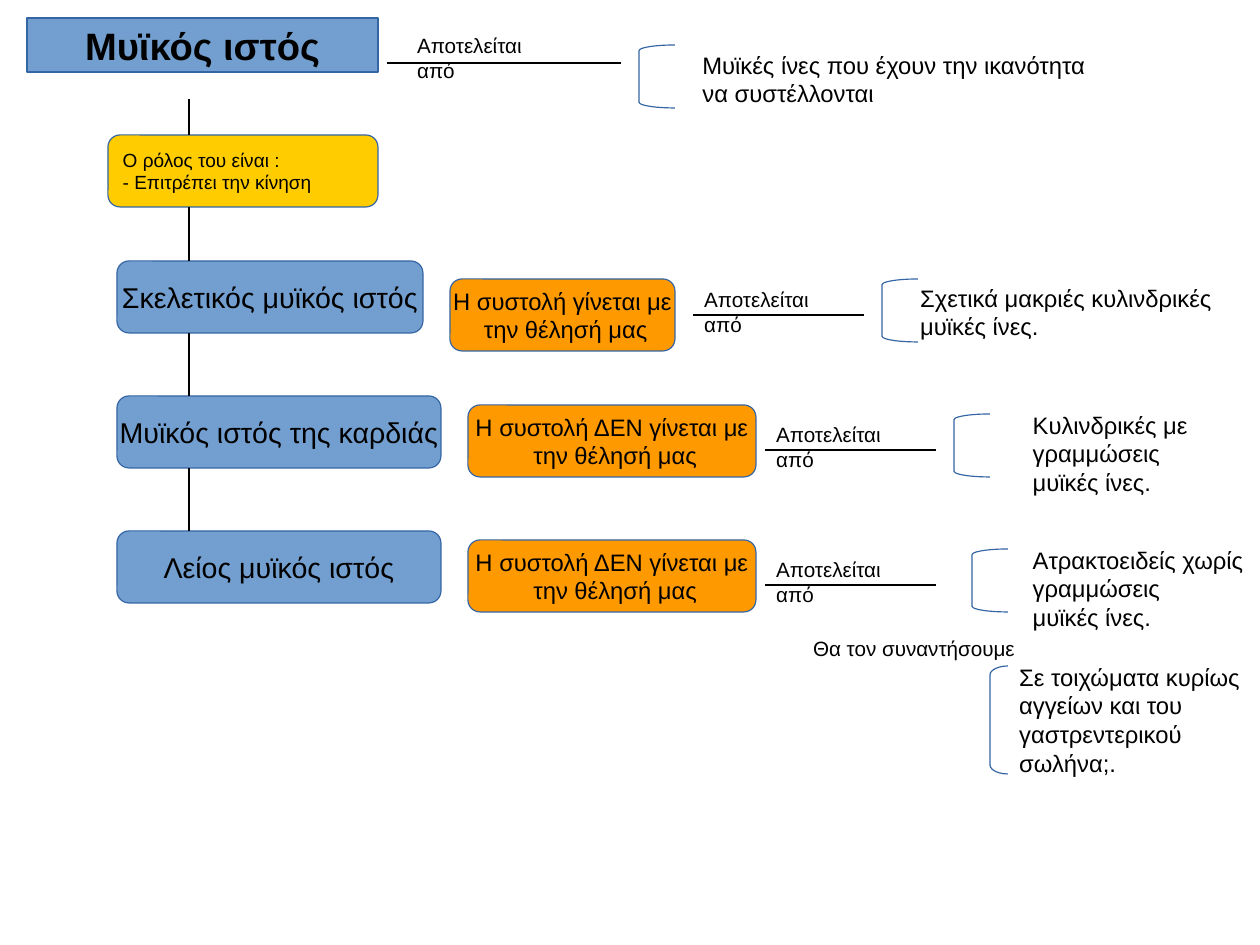
"""Build a one-slide concept map of the types of muscle tissue."""
from dataclasses import dataclass

from lxml import etree
from pptx import Presentation
from pptx import util as u
from pptx.dml import color
from pptx.enum import shapes, text
from pptx.oxml import ns


@dataclass(frozen=True)
class Theme:
    font: str = "Arial"
    ink: color.RGBColor = color.RGBColor(0, 0, 0)
    outline: color.RGBColor = color.RGBColor(0x34, 0x65, 0xA4)
    tissue: color.RGBColor = color.RGBColor(0x72, 0x9F, 0xCF)
    role: color.RGBColor = color.RGBColor(0xFF, 0xCC, 0x00)
    control: color.RGBColor = color.RGBColor(0xFF, 0x99, 0x00)
    heading_size: int = 24
    tissue_size: int = 18
    detail_size: int = 15
    label_size: int = 13
    role_size: int = 12
    line_width: float = 0.75


theme = Theme()
CENTER, LEFT = text.PP_ALIGN.CENTER, text.PP_ALIGN.LEFT


def paint(shape, fill):
    """Give a shape its fill, if any, and the thin outline."""
    if fill is None:
        shape.fill.background()
    else:
        shape.fill.solid()
        shape.fill.fore_color.rgb = fill
    shape.line.color.rgb = theme.outline
    shape.line.width = u.Pt(theme.line_width)


def write(shape, words, size, align=LEFT, anchor=text.MSO_ANCHOR.TOP, bold=False):
    """Put formatted text into a shape; centred text does not wrap."""
    frame = shape.text_frame
    frame.text = words
    frame.auto_size = text.MSO_AUTO_SIZE.NONE
    frame.word_wrap = align == LEFT
    frame.vertical_anchor = anchor
    for paragraph in frame.paragraphs:
        paragraph.alignment = align
        for run in paragraph.runs:
            run.font.name = theme.font
            run.font.size = u.Pt(size)
            run.font.bold = bold
            run.font.color.rgb = theme.ink


deck = Presentation()
deck.slide_width, deck.slide_height = u.Cm(28), u.Cm(21)
slide = deck.slides.add_slide(deck.slide_layouts[5])
middle = text.MSO_ANCHOR.MIDDLE

heading = slide.shapes.title
heading.left, heading.top, heading.width, heading.height = map(u.Cm, (0.6, 0.4, 7.8, 1.2))
outline = etree.SubElement(heading._element.spPr, ns.qn("a:prstGeom"), prst="roundRect")
etree.SubElement(outline, ns.qn("a:avLst"))
paint(heading, theme.tissue)
write(heading, "Μυϊκός ιστός", theme.heading_size, CENTER, middle, True)

voluntary = "Η συστολή γίνεται με\n την θέλησή μας"
involuntary = "Η συστολή ΔΕΝ γίνεται με\n την θέλησή μας"
boxes = [
    (2.4, 3, 6, "Ο ρόλος του είναι :\n- Επιτρέπει την κίνηση", theme.role, theme.role_size, LEFT),
    (2.6, 5.8, 6.8, "Σκελετικός μυϊκός ιστός", theme.tissue, theme.tissue_size, CENTER),
    (10, 6.2, 5, voluntary, theme.control, theme.detail_size, CENTER),
    (2.6, 8.8, 7.2, "Μυϊκός ιστός της καρδιάς", theme.tissue, theme.tissue_size, CENTER),
    (10.4, 9, 6.4, involuntary, theme.control, theme.detail_size, CENTER),
    (2.6, 11.8, 7.2, "Λείος μυϊκός ιστός", theme.tissue, theme.tissue_size, CENTER),
    (10.4, 12, 6.4, involuntary, theme.control, theme.detail_size, CENTER),
]
for left, top, width, words, fill, size, align in boxes:
    box = slide.shapes.add_shape(
        shapes.MSO_SHAPE.ROUNDED_RECTANGLE, *map(u.Cm, (left, top, width, 1.6)))
    box.shadow.inherit = False
    paint(box, fill)
    write(box, words, size, align, middle)

brackets = [
    (14.2, 1, 0.8, 1.4, 0.16),
    (19.6, 6.2, 0.8, 1.4, 0.16),
    (21.2, 9.2, 0.8, 1.4, 0.16),
    (21.6, 12.2, 0.8, 1.4, 0.16),
    (22, 14.8, 0.4, 2.4, 0.5),
]
for *place, curve in brackets:
    bracket = slide.shapes.add_shape(shapes.MSO_SHAPE.LEFT_BRACKET, *map(u.Cm, place))
    bracket.adjustments[0] = curve
    bracket.shadow.inherit = False
    paint(bracket, None)

consists_of = "Αποτελείται από"
notes = [
    (9.02, 0.6, 3.7, 0.76, consists_of, theme.label_size),
    (15.4, 6.25, 3.7, 0.76, consists_of, theme.label_size),
    (17, 9.25, 3.7, 0.76, consists_of, theme.label_size),
    (17, 12.25, 3.7, 0.76, consists_of, theme.label_size),
    (17.82, 14, 5.2, 0.8, "Θα τον συναντήσουμε", theme.label_size),
    (15.36, 1, 9.2, 1.42, "Μυϊκές ίνες που έχουν την ικανότητα\nνα συστέλλονται", theme.detail_size),
    (20.2, 6.17, 7.2, 1.42, "Σχετικά μακριές κυλινδρικές\nμυϊκές ίνες.", theme.detail_size),
    (22.7, 9, 4.12, 2, "Κυλινδρικές με\nγραμμώσεις\nμυϊκές ίνες.", theme.detail_size),
    (22.7, 12, 5.3, 2, "Ατρακτοειδείς χωρίς\nγραμμώσεις\nμυϊκές ίνες.", theme.detail_size),
    (22.4, 14.6, 5.56, 2.6, "Σε τοιχώματα κυρίως\nαγγείων και του\nγαστρεντερικού\nσωλήνα;.",
     theme.detail_size),
]
for *place, words, size in notes:
    write(slide.shapes.add_textbox(*map(u.Cm, place)), words, size)

trunk = [(4.2, start, 4.2, end) for start, end in ((2.2, 3), (4.6, 5.8), (7.4, 8.8), (10.4, 11.8))]
branches = [(8.6, 1.4, 13.8, 1.4), (15.4, 7, 19.2, 7), (17, 10, 20.8, 10), (17, 13, 20.8, 13)]
for ends in trunk + branches:
    link = slide.shapes.add_connector(shapes.MSO_CONNECTOR.STRAIGHT, *map(u.Cm, ends))
    link.line.color.rgb = theme.ink
    link.line.width = u.Pt(theme.line_width)
    etree.SubElement(link._element.spPr, ns.qn("a:effectLst"))

deck.save("out.pptx")
